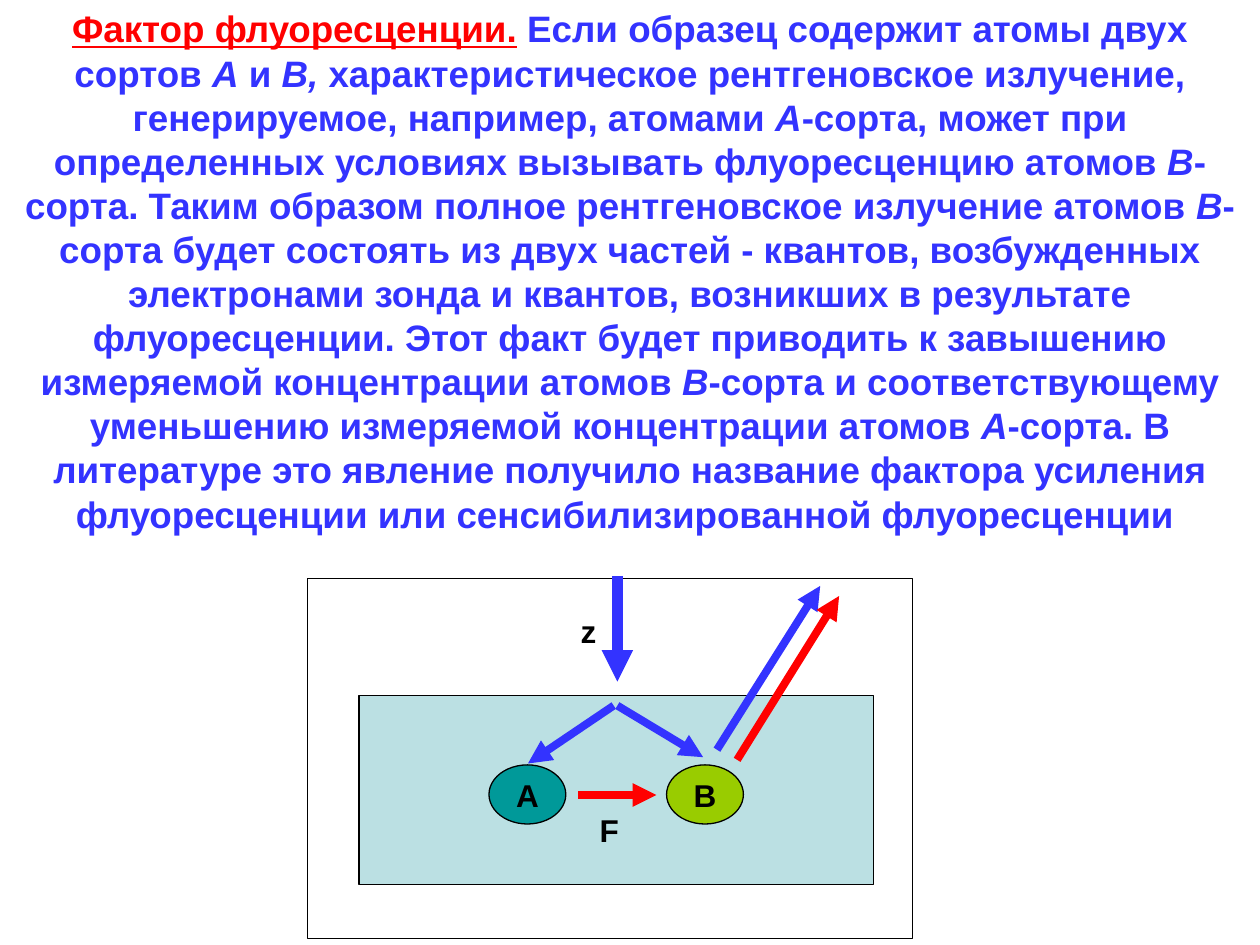
from dataclasses import dataclass

from lxml import etree
from pptx import Presentation
from pptx.dml.color import RGBColor
from pptx.enum import shapes, text
from pptx.oxml import ns
from pptx.util import Pt


@dataclass(frozen=True)
class Theme:
    font: str = "Arial"
    body_size: float = 21
    body_leading: float = 25.2
    label_size: float = 18
    outline: float = 0.75
    ray: float = 4.5
    beam: float = 6
    paper: str = "FFFFFF"
    ink: str = "000000"
    blue: str = "3333FF"
    red: str = "FF0000"
    sample: str = "BBE0E3"
    atom_a: str = "009999"
    atom_b: str = "99CC00"


THEME = Theme()

HEADING = "Фактор флуоресценции."
EXPLANATION = [
    (" Если образец содержит атомы двух сортов ", False),
    ("А", True),
    (" и ", False),
    ("В,", True),
    (" характеристическое рентгеновское излучение, генерируемое, например, атомами ", False),
    ("А", True),
    ("-сорта, может при определенных условиях вызывать флуоресценцию атомов ", False),
    ("В", True),
    ("-сорта. Таким образом полное рентгеновское излучение атомов ", False),
    ("В", True),
    ("-сорта будет состоять из двух частей - квантов, возбужденных электронами зонда "
     "и квантов, возникших в результате флуоресценции. Этот факт будет приводить "
     "к завышению измеряемой концентрации атомов ", False),
    ("В", True),
    ("-сорта и соответствующему уменьшению измеряемой концентрации атомов ", False),
    ("А", True),
    ("-сорта. В литературе это явление получило название фактора усиления "
     "флуоресценции или сенсибилизированной флуоресценции ", False),
]


def rgb(color):
    return RGBColor.from_string(color)


def add_run(paragraph, words, size, color, italic=False, underline=False):
    run = paragraph.add_run()
    run.text = words
    font = run.font
    font.name, font.size, font.bold = THEME.font, Pt(size), True
    font.italic, font.underline = italic, underline
    font.color.rgb = rgb(color)


def add_figure(slide, kind, box, fill, outlined=True):
    figure = slide.shapes.add_shape(kind, *map(Pt, box))
    figure.shadow.inherit = False
    figure.fill.solid()
    figure.fill.fore_color.rgb = rgb(fill)
    if outlined:
        figure.line.color.rgb = rgb(THEME.ink)
        figure.line.width = Pt(THEME.outline)
    else:
        figure.line.fill.background()
    return figure


def add_arrow(slide, start, end, color, width):
    arrow = slide.shapes.add_connector(
        shapes.MSO_CONNECTOR.STRAIGHT, *map(Pt, (*start, *end)))
    arrow.line.color.rgb = rgb(color)
    arrow.line.width = Pt(width)
    etree.SubElement(arrow.line._get_or_add_ln(), ns.qn("a:tailEnd"), type="triangle")
    etree.SubElement(arrow._element.spPr, ns.qn("a:effectLst"))


def add_atom(slide, box, name, color):
    atom = add_figure(slide, shapes.MSO_SHAPE.OVAL, box, color)
    frame = atom.text_frame
    frame.word_wrap = False
    frame.vertical_anchor = text.MSO_ANCHOR.MIDDLE
    frame.paragraphs[0].alignment = text.PP_ALIGN.CENTER
    add_run(frame.paragraphs[0], name, THEME.label_size, THEME.ink)


def add_label(slide, box, name):
    frame = slide.shapes.add_textbox(*map(Pt, box)).text_frame
    frame.word_wrap = False
    frame.auto_size = text.MSO_AUTO_SIZE.SHAPE_TO_FIT_TEXT
    add_run(frame.paragraphs[0], name, THEME.label_size, THEME.ink)


def add_explanation(slide, box):
    panel = add_figure(slide, shapes.MSO_SHAPE.RECTANGLE, box, THEME.paper, outlined=False)
    frame = panel.text_frame
    frame.word_wrap = True
    frame.auto_size = text.MSO_AUTO_SIZE.SHAPE_TO_FIT_TEXT
    frame.vertical_anchor = text.MSO_ANCHOR.TOP
    paragraph = frame.paragraphs[0]
    paragraph.alignment = text.PP_ALIGN.CENTER
    paragraph.line_spacing = Pt(THEME.body_leading)
    add_run(paragraph, HEADING, THEME.body_size, THEME.red, underline=True)
    for words, italic in EXPLANATION:
        add_run(paragraph, words, THEME.body_size, THEME.blue, italic)


def add_diagram(slide, box):
    left, top, _, _ = box

    def place(x, y, *size):
        return (left + x, top + y, *size)

    rectangle = shapes.MSO_SHAPE.RECTANGLE
    add_figure(slide, rectangle, box, THEME.paper)
    add_figure(slide, rectangle, place(29.5, 67, 293.8, 108), THEME.sample)

    atoms = [("A", 103.7, THEME.atom_a), ("B", 205.2, THEME.atom_b)]
    for name, x, color in atoms:
        add_atom(slide, place(x, 106.6, 43.9, 33.8), name, color)

    arrows = [
        ((175, 72.7), (126, 105.8), THEME.blue, THEME.ray),
        ((177.1, 72.7), (226.1, 102.2), THEME.blue, THEME.ray),
        ((177.1, -1.4), (177.1, 59), THEME.blue, THEME.beam),
        ((154.8, 123.8), (199.4, 123.8), THEME.red, THEME.ray),
        ((234, 97.9), (293, 4.3), THEME.blue, THEME.ray),
        ((245.5, 103.7), (303.8, 10.1), THEME.red, THEME.ray),
    ]
    for start, end, color, width in arrows:
        add_arrow(slide, place(*start), place(*end), color, width)

    add_label(slide, place(149, 15.8, 23.8, 28.8), "z")
    add_label(slide, place(159.8, 129.6, 25.2, 28.8), "F")


def main():
    deck = Presentation()
    deck.slide_width, deck.slide_height = Pt(720), Pt(540)
    slide = deck.slides.add_slide(deck.slide_layouts[6])
    add_explanation(slide, (0, 0, 720, 312.5))
    add_diagram(slide, (175.7, 330.5, 345.6, 206))
    deck.save("out.pptx")


if __name__ == "__main__":
    main()
